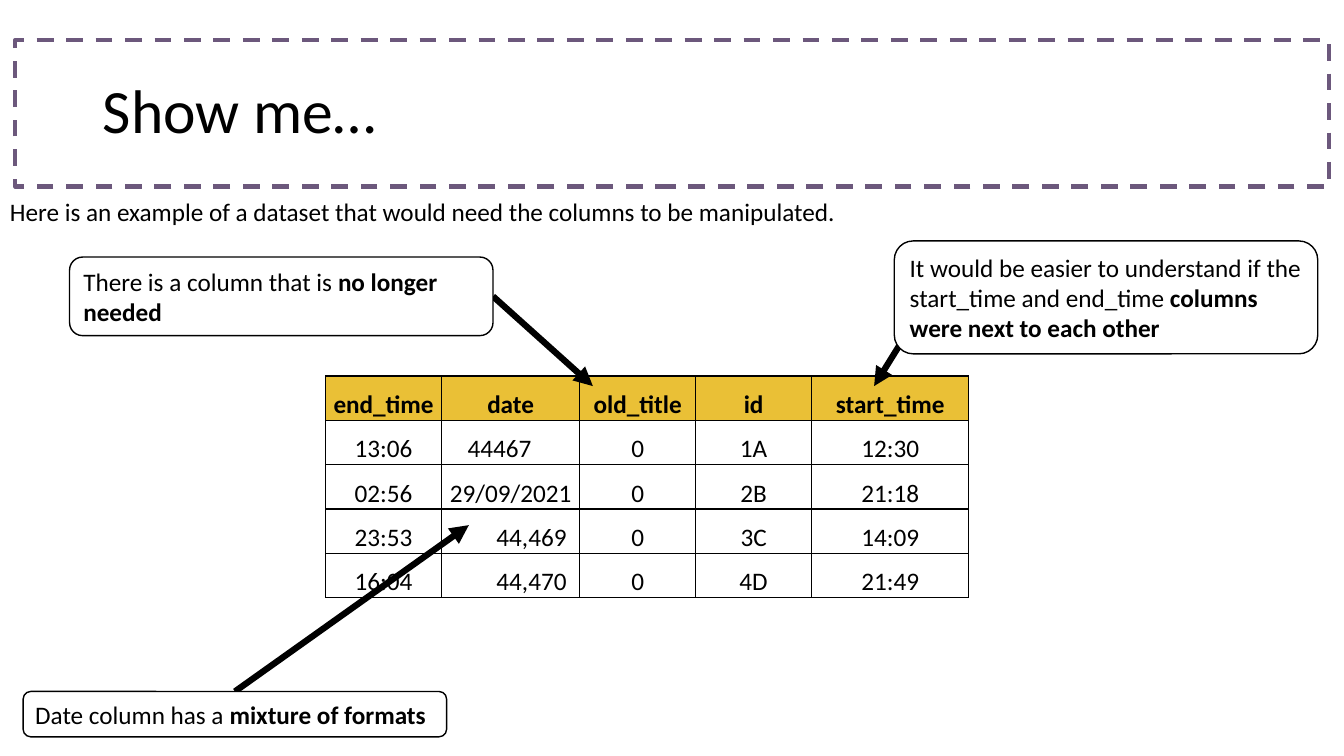
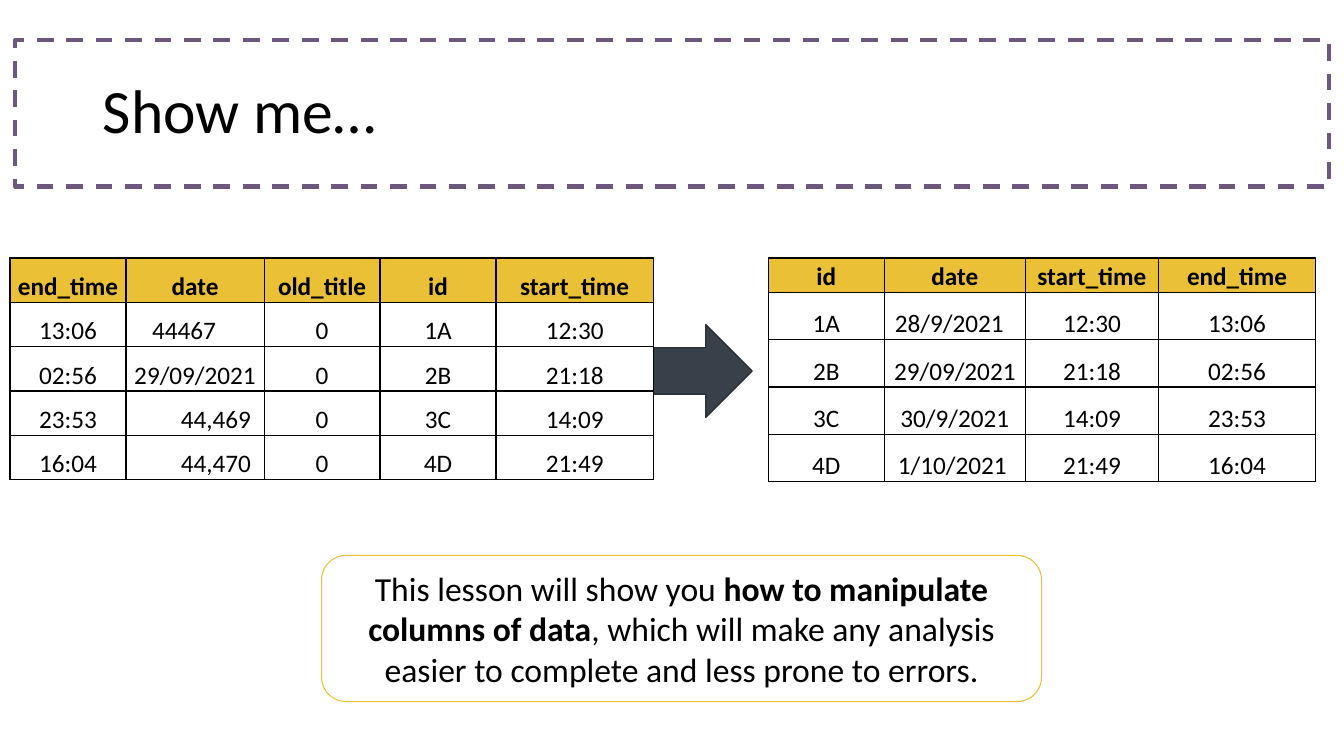
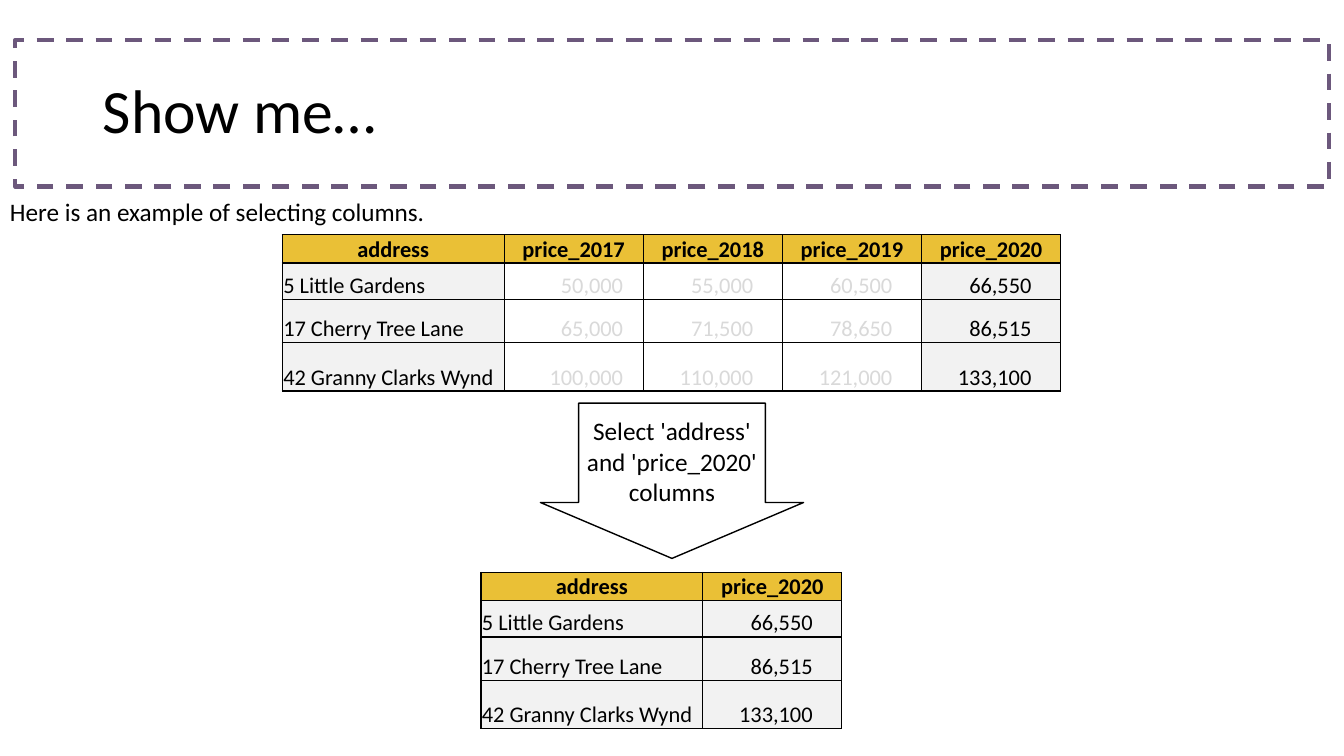
from dataclasses import dataclass, replace
from typing import NamedTuple, Optional, Sequence, Union

from lxml.etree import SubElement
from pptx import Presentation
from pptx.dml.color import RGBColor
from pptx.enum.dml import MSO_LINE
from pptx.enum.shapes import MSO_CONNECTOR, MSO_SHAPE as Preset
from pptx.enum.text import MSO_ANCHOR as Anchor, MSO_AUTO_SIZE as AutoSize, PP_ALIGN as Align
from pptx.oxml.ns import qn
from pptx.util import Inches, Pt


@dataclass(frozen=True)
class Theme:
    font: str = "Calibri"
    ink: RGBColor = RGBColor(0x00, 0x00, 0x00)
    paper: RGBColor = RGBColor(0xFF, 0xFF, 0xFF)
    header: RGBColor = RGBColor(0xEA, 0xC0, 0x36)
    frame: RGBColor = RGBColor(0x6C, 0x58, 0x7C)
    kept: RGBColor = RGBColor(0xF2, 0xF2, 0xF2)
    faded: RGBColor = RGBColor(0xD9, 0xD9, 0xD9)
    slate: RGBColor = RGBColor(0x38, 0x40, 0x49)
    slate_edge: RGBColor = RGBColor(0x29, 0x2F, 0x36)
    title_size: int = 44
    summary_size: int = 24
    body_size: int = 18
    small_size: int = 16


THEME = Theme()
CELL_MARGIN = 0.01


class Box(NamedTuple):
    left: float
    top: float
    width: float
    height: float

    def lengths(self) -> list:
        return [Inches(value) for value in self]


class Run(NamedTuple):
    text: str
    bold: bool = False


class Entry(NamedTuple):
    """A table value that is placed differently from its column."""
    text: str
    align: Align = Align.CENTER
    inset: float = CELL_MARGIN


@dataclass(frozen=True)
class Column:
    header: str
    width: float
    values: Sequence[Union[str, Entry]]
    align: Align = Align.CENTER
    inset: float = CELL_MARGIN
    color: RGBColor = THEME.ink
    fill: RGBColor = THEME.paper


@dataclass(frozen=True)
class Callout:
    box: Box
    runs: Sequence[Run]
    start: tuple
    target: tuple
    site: Optional[int] = None


TITLE_FRAME = Box(0.15, 0.4, 13.03, 1.45)
TITLE_BOX = Box(0.92, 0.4, 11.5, 1.45)
INTRO_BOX = Box(0, 1.9, 8.87, 0.4)

# Timetable data
OLD_HEIGHTS = [0.44] * 5
OLD_COLUMNS = [
    Column("end_time", 1.15, ["13:06", "02:56", "23:53", "16:04"]),
    Column("date", 1.37, [
        Entry("44467", inset=0.23),
        "29/09/2021",
        Entry("44,469", Align.RIGHT, 0.13),
        Entry("44,470", Align.RIGHT, 0.13),
    ]),
    Column("old_title", 1.15, ["0"] * 4),
    Column("id", 1.15, ["1A", "2B", "3C", "4D"]),
    Column("start_time", 1.56, ["12:30", "21:18", "14:09", "21:49"]),
]
END_TIME, _, _, ID, START_TIME = OLD_COLUMNS
NEW_HEIGHTS = [0.34] + [0.47] * 4
NEW_COLUMNS = [
    ID,
    Column("date", 1.4, [
        Entry("28/9/2021", inset=0.12),
        "29/09/2021",
        "30/9/2021",
        Entry("1/10/2021", inset=0.06),
    ]),
    replace(START_TIME, width=1.32),
    replace(END_TIME, width=1.56),
]

# House price data
PRICE_HEIGHTS = [0.28, 0.36, 0.43, 0.48]
ADDRESS = Column(
    "address", 2.2,
    ["5 Little Gardens", "17 Cherry Tree Lane", "42 Granny Clarks Wynd"],
    align=Align.LEFT, fill=THEME.kept,
)
PRICE_2017 = Column("price_2017", 1.38, ["50,000", "65,000", "100,000"],
                    align=Align.RIGHT, inset=0.2, color=THEME.faded)
PRICE_2018 = replace(PRICE_2017, header="price_2018", inset=0.29,
                     values=["55,000", "71,500", "110,000"])
PRICE_2019 = replace(PRICE_2018, header="price_2019",
                     values=["60,500", "78,650", "121,000"])
PRICE_2020 = replace(PRICE_2018, header="price_2020",
                     values=["66,550", "86,515", "133,100"],
                     color=THEME.ink, fill=THEME.kept)

# Remarks on the timetable
CALLOUTS = [
    Callout(Box(0.69, 2.55, 4.2, 0.78),
            [Run("There is a column that is "), Run("no longer needed", True)],
            start=(4.89, 2.94), target=(5.88, 3.83), site=3),
    Callout(Box(0.23, 6.86, 4.2, 0.45),
            [Run("Date column has a "), Run("mixture of formats", True)],
            start=(2.33, 6.86), target=(4.65, 5.21), site=0),
    Callout(Box(8.87, 2.39, 4.2, 1.12),
            [Run("It would be easier to understand if the start_time and end_time "),
             Run("columns were next to each other", True)],
            start=(8.98, 3.33), target=(8.67, 3.83)),
]


def write(frame, text: Union[str, Sequence[Run]], *, size: int = THEME.body_size,
          color: RGBColor = THEME.ink, bold: bool = False,
          align: Align = Align.LEFT, spacing: Optional[float] = None) -> None:
    """Fill a text frame with one formatted paragraph."""
    paragraph = frame.paragraphs[0]
    paragraph.alignment = align
    if spacing:
        paragraph.line_spacing = spacing
    for part in [Run(text, bold)] if isinstance(text, str) else text:
        run = paragraph.add_run()
        run.text = part.text
        run.font.name = THEME.font
        run.font.size = Pt(size)
        run.font.bold = part.bold
        run.font.color.rgb = color


def add_outline(slide, preset: Preset, box: Box, *, line: RGBColor = THEME.ink,
                weight: float = 1, fill: Optional[RGBColor] = None):
    shape = slide.shapes.add_shape(preset, *box.lengths())
    shape.shadow.inherit = False
    if fill is None:
        shape.fill.background()
    else:
        shape.fill.solid()
        shape.fill.fore_color.rgb = fill
    shape.line.color.rgb = line
    shape.line.width = Pt(weight)
    shape.text_frame.word_wrap = True
    return shape


def add_titled_slide(deck):
    slide = deck.slides.add_slide(deck.slide_layouts[5])
    frame = add_outline(slide, Preset.RECTANGLE, TITLE_FRAME, line=THEME.frame, weight=3)
    frame.line.dash_style = MSO_LINE.DASH
    title = slide.shapes.title
    title.left, title.top, title.width, title.height = TITLE_BOX.lengths()
    title.text_frame.auto_size = AutoSize.NONE
    title.text_frame.vertical_anchor = Anchor.MIDDLE
    write(title.text_frame, "Show me…", size=THEME.title_size, spacing=0.9)
    return slide


def add_intro(slide, text: str) -> None:
    intro = slide.shapes.add_textbox(*INTRO_BOX.lengths())
    intro.text_frame.word_wrap = True
    write(intro.text_frame, text)


def add_borders(cell) -> None:
    properties = cell._tc.get_or_add_tcPr()
    for side in ("lnL", "lnR", "lnT", "lnB"):
        border = SubElement(properties, qn(f"a:{side}"), w=str(Pt(1)))
        SubElement(SubElement(border, qn("a:solidFill")), qn("a:srgbClr"), val=str(THEME.ink))


def fill_cell(cell, entry: Entry, *, fill: RGBColor, size: int,
              color: RGBColor = THEME.ink, bold: bool = False) -> None:
    add_borders(cell)
    cell.fill.solid()
    cell.fill.fore_color.rgb = fill
    cell.vertical_anchor = Anchor.BOTTOM
    cell.margin_left = cell.margin_top = Inches(CELL_MARGIN)
    cell.margin_right = Inches(entry.inset)
    cell.margin_bottom = 0
    write(cell.text_frame, entry.text, size=size, color=color, bold=bold, align=entry.align)


def add_data_table(slide, left: float, top: float, columns: Sequence[Column],
                   heights: Sequence[float], size: int = THEME.body_size) -> None:
    box = Box(left, top, sum(column.width for column in columns), sum(heights))
    table = slide.shapes.add_table(len(heights), len(columns), *box.lengths()).table
    table.first_row = table.horz_banding = False
    for row, height in zip(table.rows, heights):
        row.height = Inches(height)
    for x, column in enumerate(columns):
        table.columns[x].width = Inches(column.width)
        fill_cell(table.cell(0, x), Entry(column.header), fill=THEME.header,
                  size=size, bold=True)
        for y, value in enumerate(column.values, start=1):
            entry = value if isinstance(value, Entry) else Entry(value, column.align, column.inset)
            fill_cell(table.cell(y, x), entry, fill=column.fill, size=size, color=column.color)


def add_pointer(slide, start: tuple, target: tuple):
    pointer = slide.shapes.add_connector(
        MSO_CONNECTOR.STRAIGHT, *[Inches(value) for value in (*start, *target)])
    pointer.line.color.rgb = THEME.ink
    pointer.line.width = Pt(4.5)
    SubElement(pointer.line._get_or_add_ln(), qn("a:tailEnd"), type="triangle")
    SubElement(pointer._element.spPr, qn("a:effectLst"))
    return pointer


def add_callout(slide, callout: Callout) -> None:
    pointer = add_pointer(slide, callout.start, callout.target)
    remark = add_outline(slide, Preset.ROUNDED_RECTANGLE, callout.box, fill=THEME.paper)
    write(remark.text_frame, callout.runs)
    if callout.site is not None:
        pointer.begin_connect(remark, callout.site)


def build_problem_slide(deck) -> None:
    slide = add_titled_slide(deck)
    add_intro(slide, "Here is an example of a dataset that would need the columns to be manipulated.")
    add_data_table(slide, 3.23, 3.73, OLD_COLUMNS, OLD_HEIGHTS)
    for callout in CALLOUTS:
        add_callout(slide, callout)


def build_result_slide(deck) -> None:
    slide = add_titled_slide(deck)
    # The arrow starts behind the left table
    add_outline(slide, Preset.RIGHT_ARROW, Box(5.87, 3.22, 1.59, 0.92),
                line=THEME.slate_edge, fill=THEME.slate)
    add_data_table(slide, 0.1, 2.56, OLD_COLUMNS, OLD_HEIGHTS)
    add_data_table(slide, 7.62, 2.56, NEW_COLUMNS, NEW_HEIGHTS)
    summary = add_outline(slide, Preset.ROUNDED_RECTANGLE, Box(3.19, 5.51, 7.14, 1.45),
                          line=THEME.header, weight=0.75)
    write(summary.text_frame, [
        Run("This lesson will show you "),
        Run("how to manipulate columns of data", True),
        Run(", which will make any analysis easier to complete and less prone to errors."),
    ], size=THEME.summary_size, align=Align.CENTER)


def build_selection_slide(deck) -> None:
    slide = add_titled_slide(deck)
    add_intro(slide, "Here is an example of selecting columns.")
    prices = [ADDRESS, PRICE_2017, PRICE_2018, PRICE_2019, PRICE_2020]
    add_data_table(slide, 2.8, 2.33, prices, PRICE_HEIGHTS, THEME.small_size)
    selection = add_outline(slide, Preset.DOWN_ARROW, Box(5.36, 4, 2.61, 1.54), fill=THEME.paper)
    selection.adjustments[0] = 0.71
    selection.adjustments[1] = 0.36
    selection.text_frame.margin_left = selection.text_frame.margin_right = Inches(0.05)
    write(selection.text_frame, "Select 'address' and 'price_2020' columns", align=Align.CENTER)
    add_data_table(slide, 4.77, 5.68, [ADDRESS, PRICE_2020], PRICE_HEIGHTS, THEME.small_size)


def main() -> None:
    deck = Presentation()
    deck.slide_width, deck.slide_height = Inches(13.33), Inches(7.5)
    build_problem_slide(deck)
    build_result_slide(deck)
    build_selection_slide(deck)
    deck.save("out.pptx")


if __name__ == "__main__":
    main()
